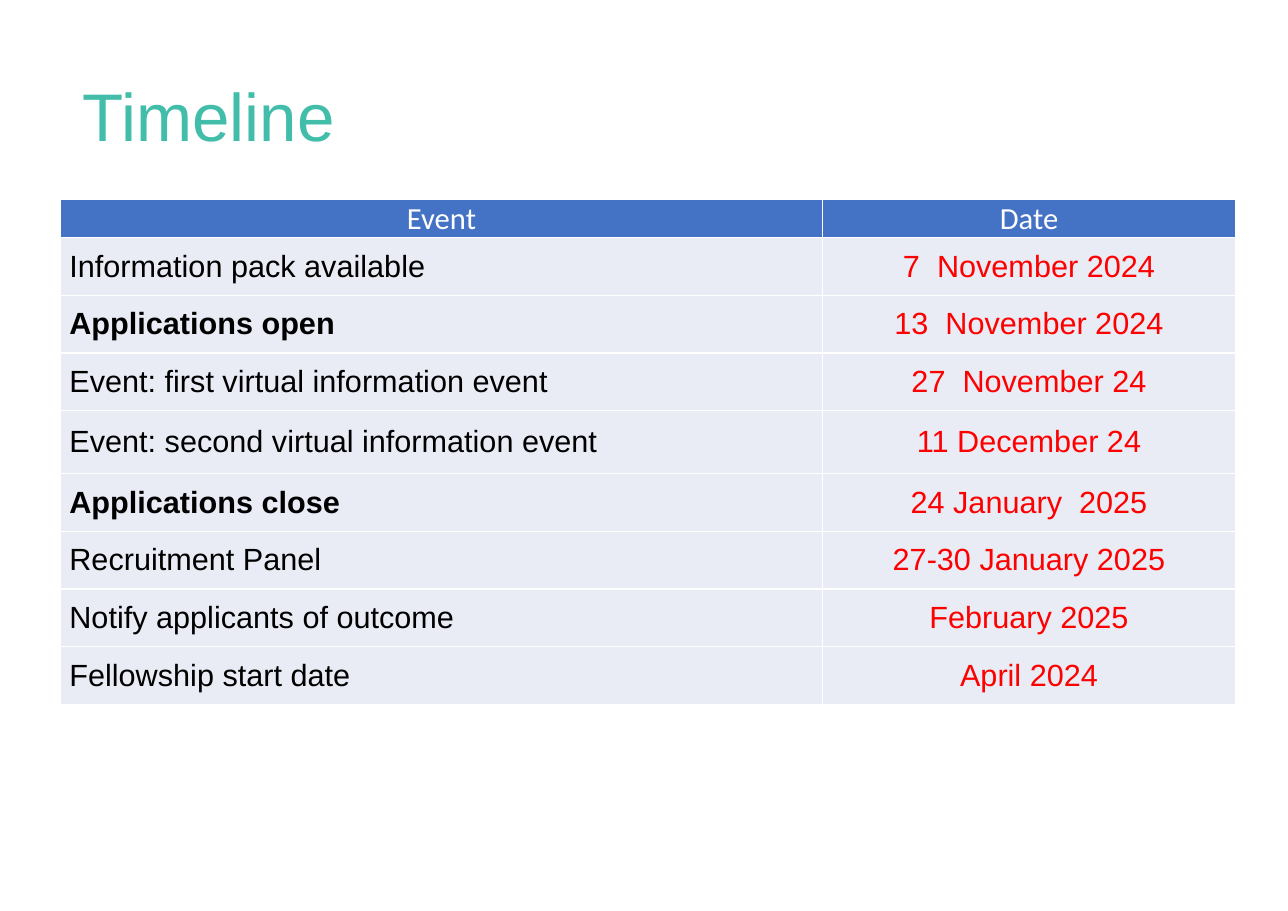
from pptx import Presentation
from pptx.dml.color import RGBColor
from pptx.enum import text
from pptx.util import Cm, Pt

EVENTS = [
    ("Information pack available", "7  November 2024"),
    ("Applications open", "13  November 2024"),
    ("Event: first virtual information event", "27  November 24"),
    ("Event: second virtual information event", "11 December 24"),
    ("Applications close", "24 January  2025"),
    ("Recruitment Panel", "27-30 January 2025"),
    ("Notify applicants of outcome", "February 2025"),
    ("Fellowship start date", "April 2024"),
]
MILESTONES = {"Applications open", "Applications close"}
TALL_EVENT = "Event: second virtual information event"
COLUMN_SHARES = (0.648, 0.352)


def paint(color_format, hex_color):
    color_format.rgb = RGBColor.from_string(hex_color)


def format_paragraph(paragraph, font_name, size, color, alignment, bold=False):
    paragraph.alignment = alignment
    paragraph.font.name = font_name
    paragraph.font.size = Pt(size)
    paragraph.font.bold = bold
    paint(paragraph.font.color, color)


def add_title(slide, wording, left, top, width, height):
    title = slide.shapes.title
    title.left, title.top, title.width, title.height = left, top, width, height
    frame = title.text_frame
    frame.text = wording
    frame.auto_size = text.MSO_AUTO_SIZE.NONE
    frame.vertical_anchor = text.MSO_ANCHOR.MIDDLE
    frame.margin_left = frame.margin_right = Cm(0.28)
    frame.margin_top = frame.margin_bottom = Cm(0.14)
    paragraph = frame.paragraphs[0]
    paragraph.line_spacing = 0.9
    format_paragraph(paragraph, "Arial", 44, "41BDAA", text.PP_ALIGN.LEFT)


def fill_cell(cell, wording, fill, font_name, color, alignment, bold=False):
    cell.text = wording
    cell.fill.solid()
    paint(cell.fill.fore_color, fill)
    cell.vertical_anchor = text.MSO_ANCHOR.MIDDLE
    cell.margin_right = cell.margin_top = cell.margin_bottom = 0
    cell.margin_left = Cm(0.2 if alignment == text.PP_ALIGN.LEFT else 0)
    format_paragraph(cell.text_frame.paragraphs[0], font_name, 20, color, alignment, bold)


def add_timeline(slide, left, top, width, height):
    table = slide.shapes.add_table(len(EVENTS) + 1, 2, left, top, width, height).table
    table.horz_banding = False
    for column, share in zip(table.columns, COLUMN_SHARES):
        column.width = int(width * share)

    table.rows[0].height = Cm(0.88)
    for cell, heading in zip(table.rows[0].cells, ("Event", "Date")):
        fill_cell(cell, heading, "4472C4", "Calibri", "FFFFFF", text.PP_ALIGN.CENTER)

    for index, (event, date) in enumerate(EVENTS, start=1):
        table.rows[index].height = Cm(1.45 if event == TALL_EVENT else 1.33)
        fill_cell(table.cell(index, 0), event, "E9EBF5", "Arial", "000000",
                  text.PP_ALIGN.LEFT, event in MILESTONES)
        fill_cell(table.cell(index, 1), date, "E9EBF5", "Arial", "FF0000",
                  text.PP_ALIGN.CENTER)


def main():
    presentation = Presentation()
    presentation.slide_width = Cm(29.7)
    presentation.slide_height = Cm(21)
    slide = presentation.slides.add_slide(presentation.slide_layouts[5])
    add_title(slide, "Timeline", Cm(1.63), Cm(1.75), Cm(13.94), Cm(2))
    add_timeline(slide, Cm(1.4), Cm(4.6), Cm(27.1), Cm(11.64))
    presentation.save("out.pptx")


if __name__ == "__main__":
    main()
